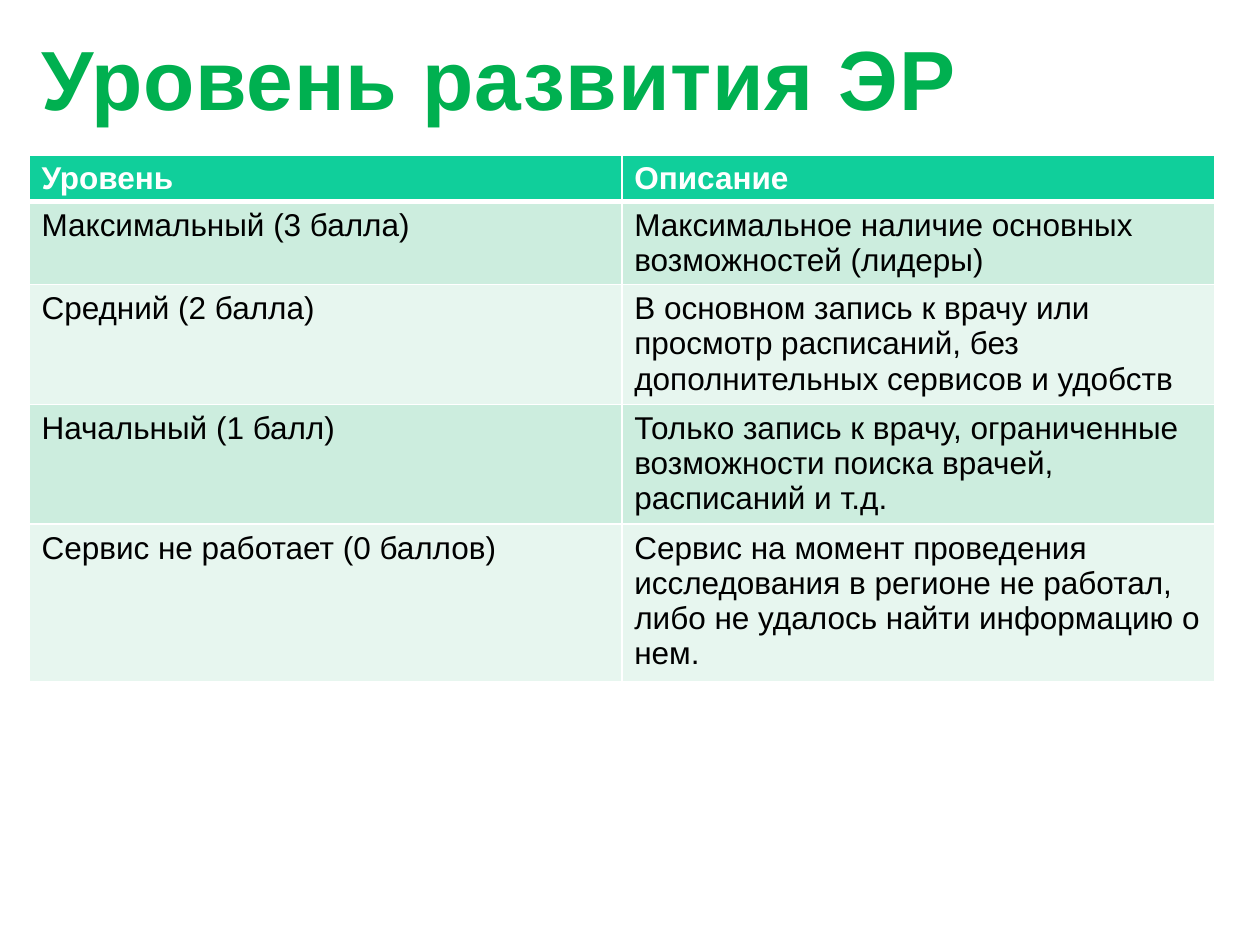
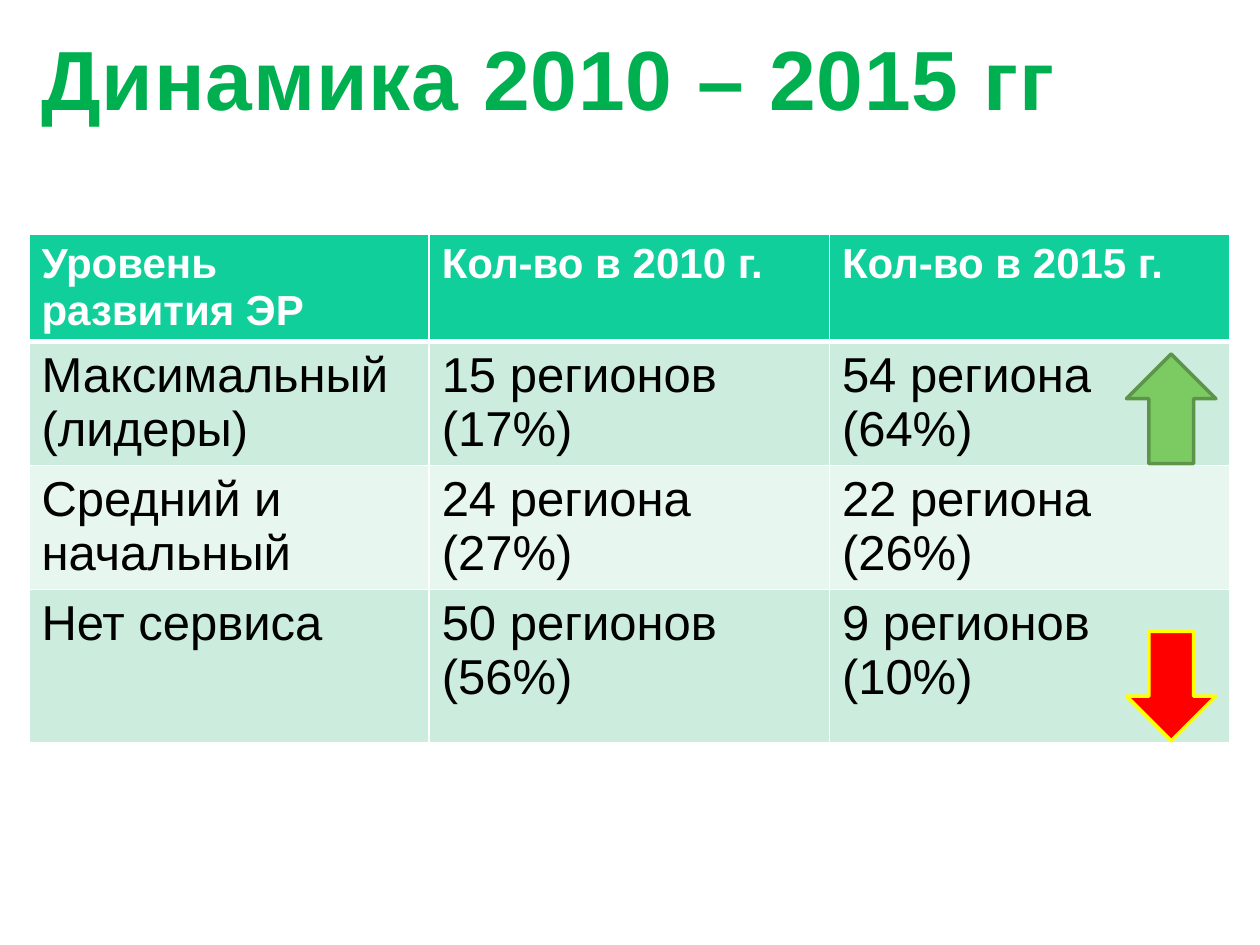
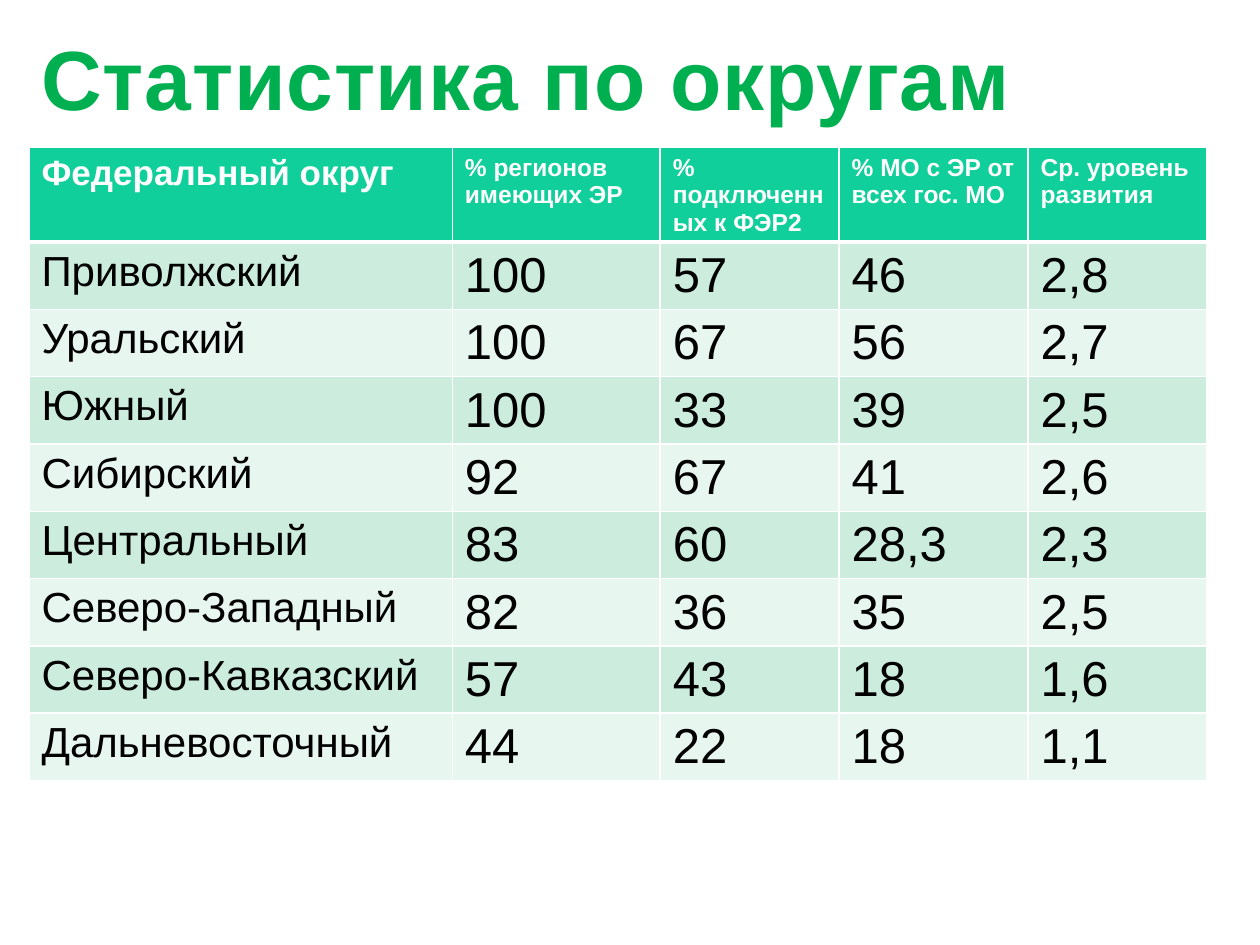
from collections import namedtuple

from lxml.etree import SubElement
from pptx import Presentation
from pptx.dml.color import RGBColor
from pptx.enum.shapes import MSO_SHAPE
from pptx.enum.text import MSO_ANCHOR
from pptx.oxml import parse_xml
from pptx.oxml.ns import nsdecls, qn
from pptx.util import Inches, Pt

SLIDE_WIDTH, SLIDE_HEIGHT = Inches(10), Inches(7.5)
COLUMN, ROW = SLIDE_WIDTH / 100, SLIDE_HEIGHT / 75

FONT = "Arial"
TITLE_GREEN = RGBColor(0x00, 0xB0, 0x50)
TITLE_OUTLINE = RGBColor(0xA6, 0xA6, 0xA6)
HEADER_GREEN = RGBColor(0x10, 0xCF, 0x9B)
BANDS = RGBColor(0xCC, 0xED, 0xDE), RGBColor(0xE7, 0xF6, 0xEF)
WHITE = RGBColor(0xFF, 0xFF, 0xFF)
BLACK = RGBColor(0x00, 0x00, 0x00)
GROWTH_FILL, GROWTH_LINE = RGBColor(0x7C, 0xCA, 0x62), RGBColor(0x5C, 0x95, 0x49)
DECLINE_FILL, DECLINE_LINE = RGBColor(0xFF, 0x00, 0x00), RGBColor(0xFF, 0xFF, 0x00)

Box = namedtuple("Box", "left top width height")
TITLE_BOX = Box(2.3, 1.6, 95.3, 10.2)

LEVELS = [
    ["Уровень", "Описание"],
    ["Максимальный (3 балла)", "Максимальное наличие основных возможностей (лидеры)"],
    ["Средний (2 балла)",
     "В основном запись к врачу или просмотр расписаний, без дополнительных сервисов и удобств"],
    ["Начальный (1 балл)",
     "Только запись к врачу, ограниченные возможности поиска врачей, расписаний и т.д."],
    ["Сервис не работает (0 баллов)",
     "Сервис на момент проведения исследования в регионе не работал, "
     "либо не удалось найти информацию о нем."],
]
DYNAMICS = [
    ["Уровень развития ЭР", "Кол-во в 2010 г.", "Кол-во в 2015 г."],
    ["Максимальный (лидеры)", "15 регионов (17%)", "54 региона (64%)"],
    ["Средний и начальный", "24 региона (27%)", "22 региона (26%)"],
    ["Нет сервиса", "50 регионов (56%)", "9 регионов (10%)"],
]
DISTRICTS = [
    ["Федеральный округ", "% регионов имеющих ЭР", "% подключенных к ФЭР2",
     "% МО с ЭР от всех гос. МО", "Ср. уровень развития"],
    ["Приволжский", "100", "57", "46", "2,8"],
    ["Уральский", "100", "67", "56", "2,7"],
    ["Южный", "100", "33", "39", "2,5"],
    ["Сибирский", "92", "67", "41", "2,6"],
    ["Центральный", "83", "60", "28,3", "2,3"],
    ["Северо-Западный", "82", "36", "35", "2,5"],
    ["Северо-Кавказский", "57", "43", "18", "1,6"],
    ["Дальневосточный", "44", "22", "18", "1,1"],
]


def place(box):
    return (round(box.left * COLUMN), round(box.top * ROW),
            round(box.width * COLUMN), round(box.height * ROW))


def add_run(paragraph, text, size, color, bold):
    run = paragraph.add_run()
    run.text = text
    run.font.name = FONT
    run.font.size = Pt(size)
    run.font.bold = bold
    run.font.color.rgb = color
    return run


def add_title(slide, text, box=TITLE_BOX):
    frame = slide.shapes.add_textbox(*place(box)).text_frame
    frame.word_wrap = True
    frame.vertical_anchor = MSO_ANCHOR.TOP
    run = add_run(frame.paragraphs[0], text, 48, TITLE_GREEN, True)
    properties = run.font._element
    properties.set("spc", "50")
    properties.insert(0, parse_xml(
        f'<a:ln {nsdecls("a")} w="{Pt(0.9)}"><a:solidFill>'
        f'<a:srgbClr val="{TITLE_OUTLINE}"/></a:solidFill></a:ln>'))


def set_borders(cell, top, bottom):
    properties = cell._tc.get_or_add_tcPr()
    sides = {"lnL": 1, "lnR": 1, "lnT": top, "lnB": bottom}
    for index, (side, width) in enumerate(sides.items()):
        line = SubElement(properties, qn(f"a:{side}"), w=str(Pt(width)))
        fill = SubElement(line, qn("a:solidFill"))
        SubElement(fill, qn("a:srgbClr"), val=str(WHITE))
        properties.insert(index, line)


def add_table(slide, box, rows, column_shares, row_shares, header_sizes, body_sizes):
    left, top, width, height = place(box)
    table = slide.shapes.add_table(len(rows), len(rows[0]), left, top, width, height).table
    table.horz_banding = False
    for column, share in zip(table.columns, column_shares):
        column.width = round(width * share / sum(column_shares))
    for row, share in zip(table.rows, row_shares):
        row.height = round(height * share / sum(row_shares))
    for row_index, texts in enumerate(rows):
        header = row_index == 0
        sizes = header_sizes if header else body_sizes
        for column_index, text in enumerate(texts):
            cell = table.cell(row_index, column_index)
            cell.margin_bottom = 0
            cell.fill.solid()
            cell.fill.fore_color.rgb = HEADER_GREEN if header else BANDS[(row_index - 1) % 2]
            set_borders(cell, 3 if row_index == 1 else 1, 3 if header else 1)
            size = sizes[min(column_index, len(sizes) - 1)]
            add_run(cell.text_frame.paragraphs[0], text, size,
                    WHITE if header else BLACK, header)


def add_trend_arrow(slide, table_box, offset, fill, line, rotation=0):
    width, height, margin = 7.1, 8.7, 1.1
    left = table_box.left + table_box.width - margin - width
    arrow = slide.shapes.add_shape(
        MSO_SHAPE.UP_ARROW, *place(Box(left, table_box.top + offset, width, height)))
    arrow.shadow.inherit = False
    arrow.rotation = rotation
    arrow.fill.solid()
    arrow.fill.fore_color.rgb = fill
    arrow.line.color.rgb = line
    arrow.line.width = Pt(2)


def build_levels(slide):
    add_title(slide, "Уровень развития ЭР")
    add_table(slide, Box(2.3, 12.3, 94.1, 41.3), LEVELS, [1, 1],
              [0.37, 0.66, 0.94, 0.94, 1.22], [18], [18])


def build_dynamics(slide):
    box = Box(2.3, 18.6, 95.3, 39.9)
    add_title(slide, "Динамика 2010 – 2015 гг")
    add_table(slide, box, DYNAMICS, [1, 1, 1], [0.84, 0.96, 0.97, 1.22], [24], [28])
    add_trend_arrow(slide, box, 9.5, GROWTH_FILL, GROWTH_LINE)
    add_trend_arrow(slide, box, 31.5, DECLINE_FILL, DECLINE_LINE, 180)


def build_districts(slide):
    add_title(slide, "Статистика по округам")
    add_table(slide, Box(2.3, 11.7, 93.5, 50.2), DISTRICTS,
              [3.36, 1.65, 1.42, 1.5, 1.42], [0.74] + [0.53] * 8, [20, 14], [24, 28])


def main():
    presentation = Presentation()
    presentation.slide_width, presentation.slide_height = SLIDE_WIDTH, SLIDE_HEIGHT
    for build in (build_levels, build_dynamics, build_districts):
        build(presentation.slides.add_slide(presentation.slide_layouts[6]))
    presentation.save("out.pptx")


if __name__ == "__main__":
    main()
